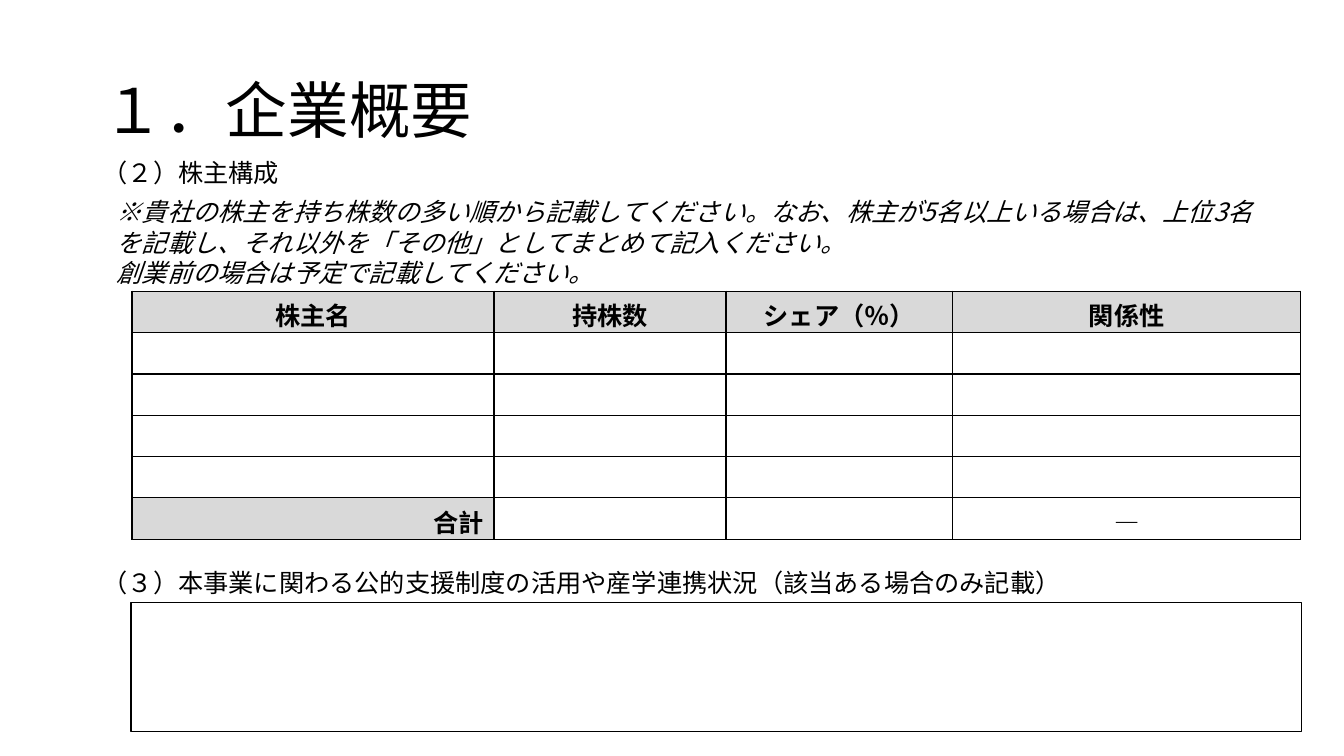
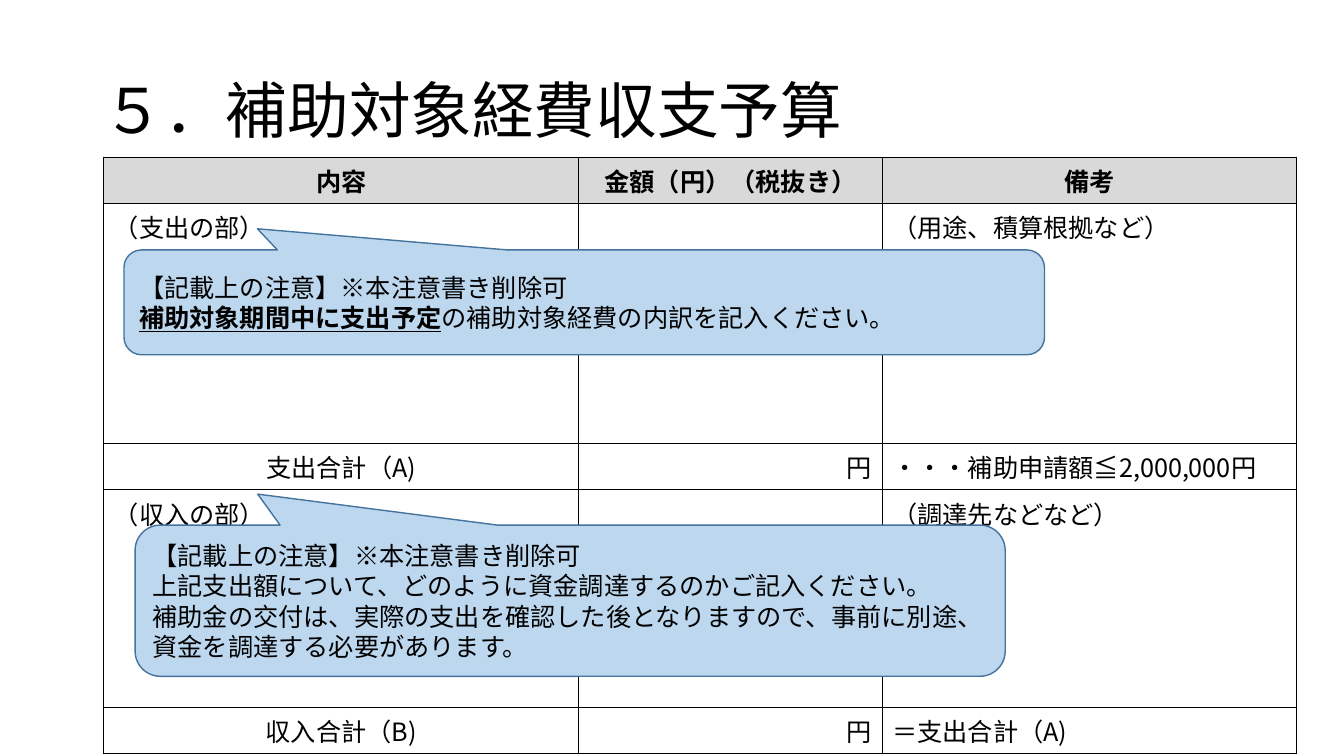
from dataclasses import dataclass
from typing import NamedTuple

from lxml import etree
from pptx import Presentation
from pptx import util as u
from pptx.dml.color import RGBColor
from pptx.enum import shapes, text
from pptx.oxml import ns

FONT = "Noto Sans CJK JP"
BLACK = RGBColor(0x00, 0x00, 0x00)
WHITE = RGBColor(0xFF, 0xFF, 0xFF)
HEADER_GREY = RGBColor(0xD9, 0xD9, 0xD9)
NOTE_BLUE = RGBColor(0xBD, 0xD7, 0xEE)
NOTE_EDGE = RGBColor(0x43, 0x73, 0x9E)

TITLE_FORMAT = {"size": u.Pt(44)}
BODY_FORMAT = {"size": u.Pt(18)}
ITALIC_FORMAT = BODY_FORMAT | {"italic": True}
BOLD_FORMAT = BODY_FORMAT | {"bold": True}
KEY_FORMAT = BOLD_FORMAT | {"underline": True}
BODY_SPACING = u.Pt(21.8)
TITLE_SPACING = 0.9

LEFT, CENTER, RIGHT = text.PP_ALIGN.LEFT, text.PP_ALIGN.CENTER, text.PP_ALIGN.RIGHT
TOP, MIDDLE = text.MSO_ANCHOR.TOP, text.MSO_ANCHOR.MIDDLE


class Area(NamedTuple):
    left: float
    top: float
    width: float
    height: float

    def inches(self) -> list:
        return [u.Inches(length) for length in self]


class Span(NamedTuple):
    words: str
    style: dict = BODY_FORMAT


class Entry(NamedTuple):
    words: str = ""
    align: text.PP_ALIGN = LEFT
    heading: bool = False


@dataclass
class Grid:
    left: float
    top: float
    columns: list[float]
    heights: list[float]
    entries: list[list[Entry]]
    bottom_margin: float = 0.05


@dataclass
class Callout:
    area: Area
    pointer: tuple[float, float]
    lines: list[list[Span]]


TITLE_AREA = Area(0.92, 0.4, 11.5, 1.45)
EMPTY = Entry()


def heading(words: str, align: text.PP_ALIGN = CENTER) -> Entry:
    return Entry(words, align, True)


# Text
def add_span(para, span: Span) -> None:
    run = para.add_run()
    run.text = span.words
    for name, value in ({"name": FONT} | span.style).items():
        setattr(run.font, name, value)
    run.font.color.rgb = BLACK
    east_asian = etree.SubElement(run.font._element, ns.qn("a:ea"))
    east_asian.set("typeface", FONT)


def write_lines(frame, lines: list[list[Span]], spacing, anchor=TOP) -> None:
    frame.word_wrap = True
    frame.vertical_anchor = anchor
    for index, spans in enumerate(lines):
        para = frame.add_paragraph() if index else frame.paragraphs[0]
        para.alignment = LEFT
        para.line_spacing = spacing
        for span in spans:
            add_span(para, span)


def add_text(page, area: Area, lines: list[str], style: dict = BODY_FORMAT,
             spacing=BODY_SPACING, anchor=TOP) -> None:
    box = page.shapes.add_textbox(*area.inches())
    write_lines(box.text_frame, [[Span(line, style)] for line in lines], spacing, anchor)


# Shapes
def add_outlined(page, kind, area: Area, fill: RGBColor, edge: RGBColor):
    shape = page.shapes.add_shape(kind, *area.inches())
    shape.shadow.inherit = False
    shape.fill.solid()
    shape.fill.fore_color.rgb = fill
    shape.line.color.rgb = edge
    shape.line.width = u.Pt(1)
    return shape


def add_callout(page, callout: Callout) -> None:
    shape = add_outlined(page, shapes.MSO_SHAPE.ROUNDED_RECTANGULAR_CALLOUT,
                         callout.area, NOTE_BLUE, NOTE_EDGE)
    for index, value in enumerate((*callout.pointer, 0.167)):
        shape.adjustments[index] = value
    write_lines(shape.text_frame, callout.lines, BODY_SPACING, MIDDLE)


# Tables
def add_borders(cell) -> None:
    properties = cell._tc.get_or_add_tcPr()
    for side in ("a:lnL", "a:lnR", "a:lnT", "a:lnB"):
        line = etree.SubElement(properties, ns.qn(side), w=str(u.Pt(1)))
        fill = etree.SubElement(line, ns.qn("a:solidFill"))
        etree.SubElement(fill, ns.qn("a:srgbClr"), val=str(BLACK))


def fill_cell(cell, entry: Entry, bottom_margin: float) -> None:
    add_borders(cell)
    cell.margin_bottom = u.Inches(bottom_margin)
    if entry.heading:
        cell.fill.solid()
        cell.fill.fore_color.rgb = HEADER_GREY
    else:
        cell.fill.background()
    if entry.words:
        para = cell.text_frame.paragraphs[0]
        para.alignment = entry.align
        add_span(para, Span(entry.words, BOLD_FORMAT if entry.heading else BODY_FORMAT))


def add_grid(page, grid: Grid) -> None:
    area = Area(grid.left, grid.top, sum(grid.columns), sum(grid.heights))
    table = page.shapes.add_table(len(grid.heights), len(grid.columns), *area.inches()).table
    table.first_row = table.horz_banding = False
    for column, width in zip(table.columns, grid.columns):
        column.width = u.Inches(width)
    for row, height, entries in zip(table.rows, grid.heights, grid.entries):
        row.height = u.Inches(height)
        for cell, entry in zip(row.cells, entries):
            fill_cell(cell, entry, grid.bottom_margin)


# Pages
def add_page(deck, title: str):
    page = deck.slides.add_slide(deck.slide_layouts[6])
    add_text(page, TITLE_AREA, [title], TITLE_FORMAT, TITLE_SPACING, MIDDLE)
    return page


def build_company_page(deck) -> None:
    page = add_page(deck, "１．企業概要")
    add_text(page, Area(1.06, 1.9, 11.5, 1.01), [
        "※貴社の株主を持ち株数の多い順から記載してください。なお、株主が5名以上いる場合は、"
        "上位3名を記載し、それ以外を「その他」としてまとめて記入ください。",
        "創業前の場合は予定で記載してください。",
    ], ITALIC_FORMAT)
    for top, words in (
        (1.51, "（２）株主構成"),
        (5.58, "（３）本事業に関わる公的支援制度の活用や産学連携状況（該当ある場合のみ記載）"),
    ):
        add_text(page, Area(0.92, top, 11.5, 0.4), [words])

    headings = [heading(words) for words in ("株主名", "持株数", "シェア（％）", "関係性")]
    total = [heading("合計", RIGHT), EMPTY, EMPTY, Entry("―", CENTER)]
    add_grid(page, Grid(1.31, 2.89, [3.59, 2.3, 2.25, 3.45], [0.41] * 6,
                        [headings, *[[EMPTY] * 4] * 4, total], bottom_margin=0))
    add_outlined(page, shapes.MSO_SHAPE.RECTANGLE, Area(1.3, 5.98, 11.61, 1.28), WHITE, BLACK)


def build_budget_page(deck) -> None:
    page = add_page(deck, "５．補助対象経費収支予算")
    yen = Entry("円", RIGHT)
    add_grid(page, Grid(1.03, 1.56, [4.71, 3.01, 4.11], [0.46, 2.38, 0.46, 2.16, 0.46], [
        [heading(words) for words in ("内容", "金額（円）（税抜き）", "備考")],
        [Entry("（支出の部）"), EMPTY, Entry("（用途、積算根拠など）")],
        [Entry("支出合計（A)", CENTER), yen, Entry("・・・補助申請額≦2,000,000円")],
        [Entry("（収入の部）"), EMPTY, Entry("（調達先などなど）")],
        [Entry("収入合計（B)", CENTER), yen, Entry("＝支出合計（A)")],
    ]))

    note_heading = [Span("【記載上の注意】※本注意書き削除可")]
    for callout in (
        Callout(Area(1.23, 2.48, 9.13, 1.04), (-0.355, -0.702), [
            note_heading,
            [Span("補助対象期間中に支出予定", KEY_FORMAT),
             Span("の補助対象経費の内訳を記入ください。")],
        ]),
        Callout(Area(1.34, 5.21, 8.63, 1.5), (-0.359, -0.705), [
            note_heading,
            [Span("上記支出額について、どのように資金調達するのかご記入ください。")],
            [Span("補助金の交付は、実際の支出を確認した後となりますので、事前に別途、"
                  "資金を調達する必要があります。")],
        ]),
    ):
        add_callout(page, callout)


def main() -> None:
    deck = Presentation()
    deck.slide_width, deck.slide_height = u.Inches(13.33), u.Inches(7.5)
    build_company_page(deck)
    build_budget_page(deck)
    deck.save("out.pptx")


if __name__ == "__main__":
    main()
